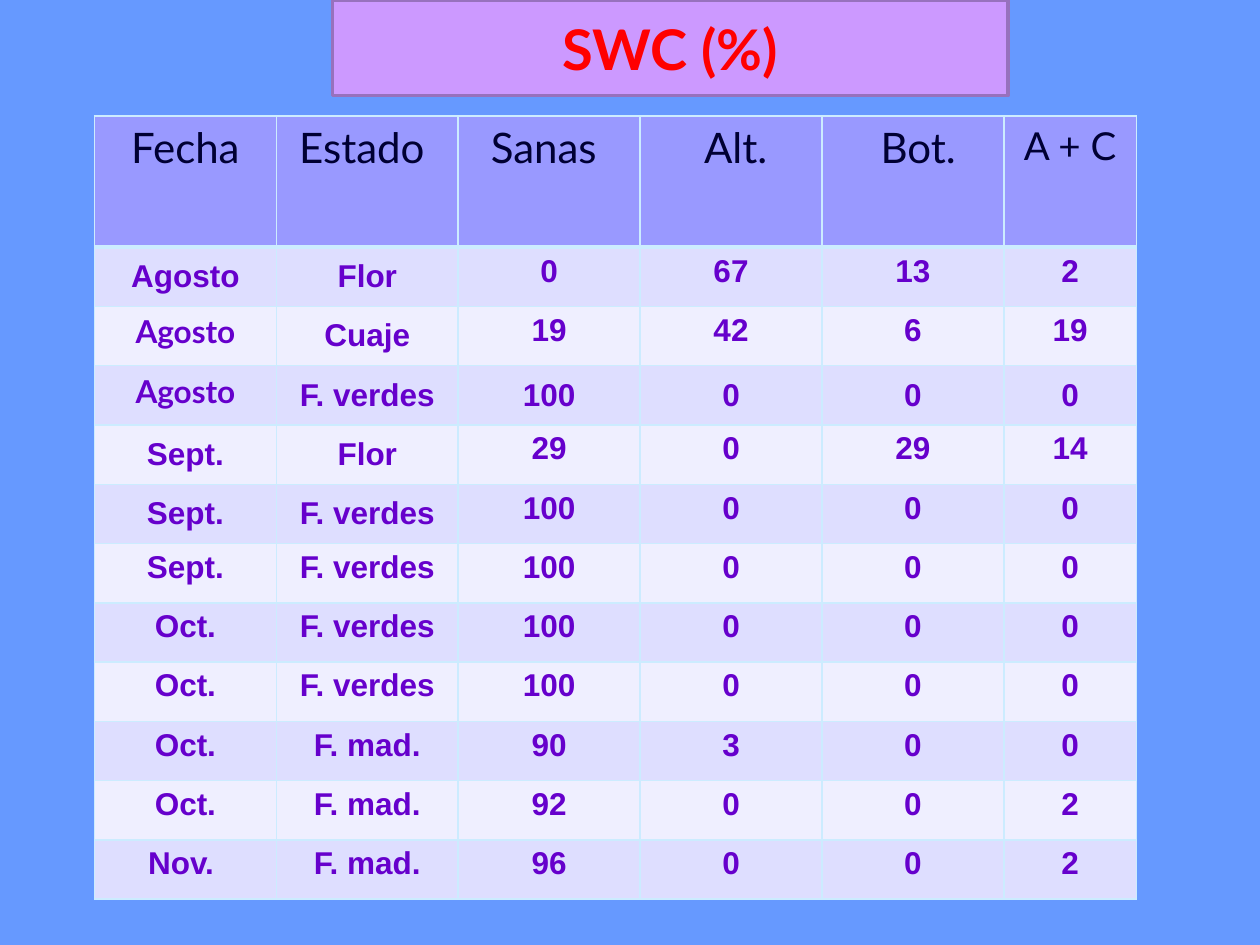
from lxml import etree
from pptx import Presentation
from pptx.dml.color import RGBColor
from pptx.enum.shapes import MSO_SHAPE
from pptx.enum.text import MSO_ANCHOR, PP_ALIGN
from pptx.oxml.ns import qn
from pptx.util import Inches, Pt

RECTANGLE = MSO_SHAPE.RECTANGLE
TOP, MIDDLE = MSO_ANCHOR.TOP, MSO_ANCHOR.MIDDLE
CENTER = PP_ALIGN.CENTER

SKY = RGBColor(0x66, 0x99, 0xFF)
LILAC = RGBColor(0xCC, 0x99, 0xFF)
PLUM = RGBColor(0x97, 0x71, 0xBD)
RED = RGBColor(0xFF, 0x00, 0x00)
NAVY = RGBColor(0x00, 0x00, 0x33)
VIOLET = RGBColor(0x66, 0x00, 0xCC)
PERIWINKLE = RGBColor(0x99, 0x99, 0xFF)
BANDS = (RGBColor(0xDE, 0xDE, 0xFF), RGBColor(0xEF, 0xEF, 0xFF))
ICE = RGBColor(0xCC, 0xEC, 0xFF)

TITLE_FONT = {"name": "Lato", "size": Pt(32), "bold": True, "color": RED}
HEADER_FONT = {"name": "Lato", "size": Pt(24), "bold": False, "color": NAVY}
LAST_HEADER_FONT = {**HEADER_FONT, "size": Pt(22)}
BODY_FONT = {"name": "Arial", "size": Pt(18), "bold": True, "color": VIOLET}
LATO_BODY_FONT = {**BODY_FONT, "name": "Lato"}

HEADERS = ("Fecha", "Estado ", "Sanas ", " Alt.", " Bot.", "A + C")
SAMPLES = (
    ("Agosto", "Flor", 0, 67, 13, 2),
    ("Agosto", "Cuaje", 19, 42, 6, 19),
    ("Agosto", "F. verdes", 100, 0, 0, 0),
    ("Sept.", "Flor", 29, 0, 29, 14),
    ("Sept.", "F. verdes", 100, 0, 0, 0),
    ("Sept.", "F. verdes", 100, 0, 0, 0),
    ("Oct.", "F. verdes", 100, 0, 0, 0),
    ("Oct.", "F. verdes", 100, 0, 0, 0),
    ("Oct.", "F. mad.", 90, 3, 0, 0),
    ("Oct.", "F. mad.", 92, 0, 0, 2),
    ("Nov. ", "F. mad.", 96, 0, 0, 2),
)
MIDDLE_COLUMNS = {1: (0, 1), 2: (1,), 3: range(1, 6), 4: (0, 1), 5: (0, 1)}
LATO_DATES = (2, 3)
COLUMN_WIDTHS = [1.44] * 5 + [1.05]
ROW_HEIGHTS = [1.04] + [0.47] * len(SAMPLES)


def write(frame, text, font_values):
    paragraph = frame.paragraphs[0]
    paragraph.alignment = CENTER
    run = paragraph.add_run()
    run.text = text
    for key, value in font_values.items():
        if key == "color":
            run.font.color.rgb = value
        else:
            setattr(run.font, key, value)


def add_borders(cell, widths):
    properties = cell._tc.get_or_add_tcPr()
    for position, (side, width) in enumerate(widths.items()):
        line = etree.Element(qn(f"a:ln{side}"), w=str(Pt(width)))
        fill = etree.SubElement(line, qn("a:solidFill"))
        etree.SubElement(fill, qn("a:srgbClr"), val=str(ICE))
        properties.insert(position, line)


def add_title(slide, left, top, width, height):
    banner = slide.shapes.add_shape(RECTANGLE, left, top, width, height)
    banner.shadow.inherit = False
    banner.fill.solid()
    banner.fill.fore_color.rgb = LILAC
    banner.line.color.rgb = PLUM
    banner.line.width = Pt(2)
    banner.text_frame.vertical_anchor = MIDDLE
    write(banner.text_frame, "SWC (%)", TITLE_FONT)


def font_for(row, column):
    if row == 0:
        return LAST_HEADER_FONT if column == len(HEADERS) - 1 else HEADER_FONT
    return LATO_BODY_FONT if column == 0 and row in LATO_DATES else BODY_FONT


def add_samples(slide, left, top, width, height):
    records = (HEADERS, *SAMPLES)
    table = slide.shapes.add_table(
        len(records), len(HEADERS), left, top, width, height).table
    for column, share in zip(table.columns, COLUMN_WIDTHS):
        column.width = int(width * share / sum(COLUMN_WIDTHS))
    for row, share in zip(table.rows, ROW_HEIGHTS):
        row.height = int(height * share / sum(ROW_HEIGHTS))
    for r, record in enumerate(records):
        for c, value in enumerate(record):
            cell = table.cell(r, c)
            cell.fill.solid()
            cell.fill.fore_color.rgb = BANDS[(r - 1) % 2] if r else PERIWINKLE
            cell.vertical_anchor = MIDDLE if c in MIDDLE_COLUMNS.get(r, ()) else TOP
            add_borders(cell, {"L": 1, "R": 1, "T": 1, "B": 1 if r else 3})
            write(cell.text_frame, str(value), font_for(r, c))


def main():
    deck = Presentation()
    deck.slide_width, deck.slide_height = Inches(10), Inches(7.5)
    slide = deck.slides.add_slide(deck.slide_layouts[6])
    slide.background.fill.solid()
    slide.background.fill.fore_color.rgb = SKY
    add_samples(slide, Inches(0.75), Inches(0.92), Inches(8.27), Inches(6.22))
    add_title(slide, Inches(2.64), 0, Inches(5.36), Inches(0.76))
    deck.save("out.pptx")


if __name__ == "__main__":
    main()
